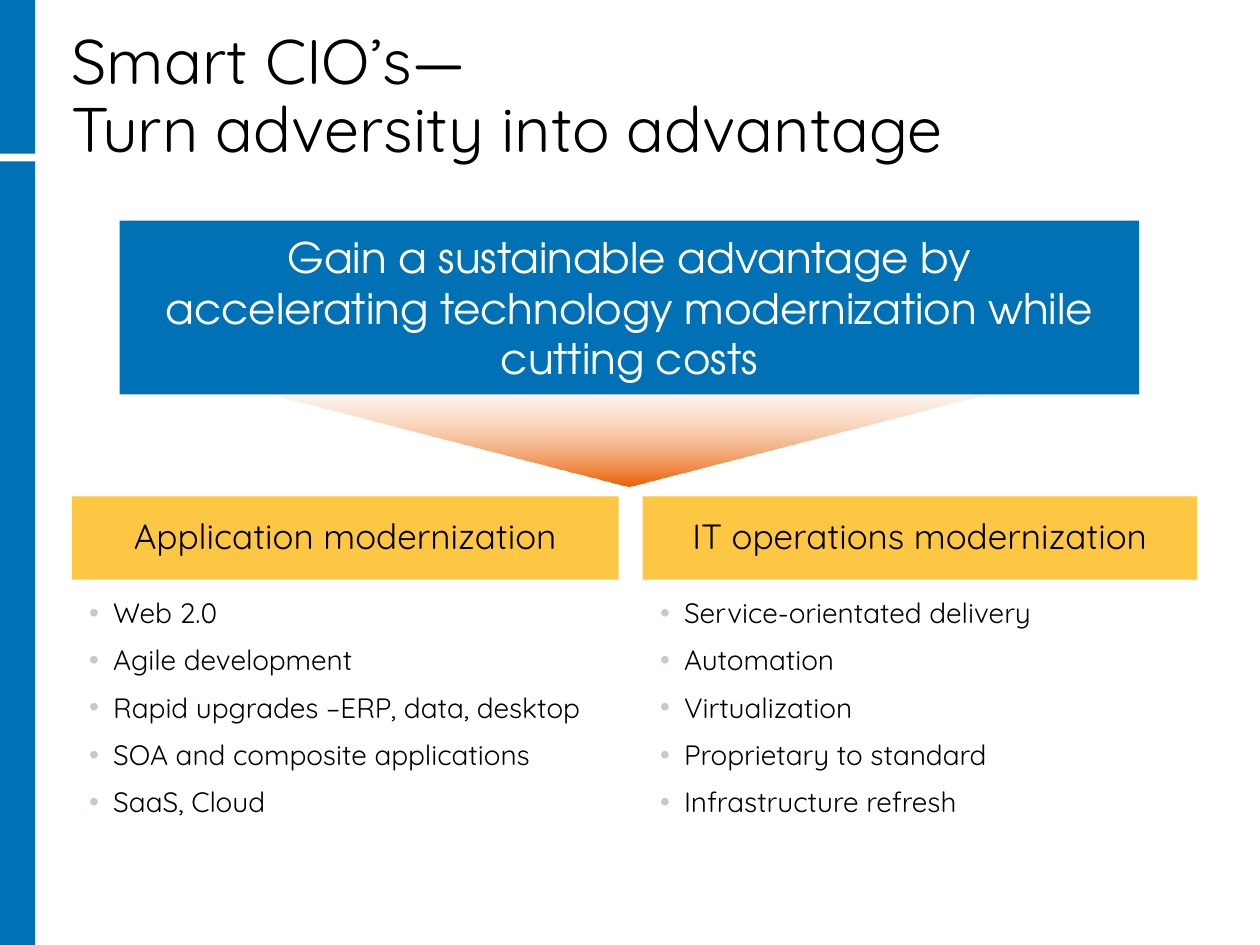
"""Build the slide on adversity and advantage, on a grid of 100 columns by 75 rows."""
import pptx
import pptx.dml.color
import pptx.enum.shapes
import pptx.enum.text
import pptx.oxml
import pptx.oxml.ns
import pptx.util

HUES = {"blue": "0071B4", "gold": "FDC643", "fire": "EB5F01",
        "white": "FFFFFF", "black": "000000", "dot": "CBC9BD"}
SANS, WIDE = "Quicksand", "TeX Gyre Adventor"
KIND = pptx.enum.shapes.MSO_SHAPE
SIDE = pptx.enum.text.PP_ALIGN
ROOM = pptx.enum.text.MSO_ANCHOR
NS = pptx.oxml.ns.nsdecls("a")

deck = pptx.Presentation()
deck.slide_width = pptx.util.Inches(10)
deck.slide_height = pptx.util.Inches(7.5)
col = deck.slide_width / 100
row = deck.slide_height / 75
slide = deck.slides.add_slide(deck.slide_layouts[6])


def block(spot, hue, kind=KIND.RECTANGLE):
    left, top, wide, high = spot
    shape = slide.shapes.add_shape(
        kind, round(left * col), round(top * row), round(wide * col), round(high * row))
    shape.shadow.inherit = False
    shape.line.fill.background()
    if hue:
        shape.fill.solid()
        shape.fill.fore_color.rgb = pptx.dml.color.RGBColor.from_string(HUES[hue])
    else:
        shape.fill.background()
    return shape


def write(shape, lines, size, hue="black", face=SANS, side=SIDE.CENTER,
          room=ROOM.MIDDLE, pitch=0.9, dots=False):
    frame = shape.text_frame
    frame.word_wrap = True
    frame.vertical_anchor = room
    for step, line in enumerate(lines):
        para = frame.add_paragraph() if step else frame.paragraphs[0]
        para.text = line
        para.alignment = side
        para.line_spacing = pitch
        if dots:
            props = para._p.get_or_add_pPr()
            props.set("marL", str(round(1.9 * col)))
            props.set("indent", str(round(-1.9 * col)))
            para.space_before = pptx.util.Pt(4 if step else 0)
            para.space_after = pptx.util.Pt(5.7)
            for part in (f'<a:buClr {NS}><a:srgbClr val="{HUES["dot"]}"/></a:buClr>',
                         f'<a:buFont {NS} typeface="Arial"/>',
                         f'<a:buChar {NS} char="•"/>'):
                props.append(pptx.oxml.parse_xml(part))
        para.font.size = pptx.util.Pt(size)
        para.font.name = face
        para.font.color.rgb = pptx.dml.color.RGBColor.from_string(HUES[hue])
    return frame


for top, high in ((12.8, 62.2), (0, 12.2)):
    block((0, top, 2.8, high), "blue")

arrow = block((11, 28.6, 77.9, 10), None, KIND.ISOSCELES_TRIANGLE)
arrow._element.spPr.xfrm.set("flipV", "1")
arrow.fill.gradient()
arrow.fill.gradient_angle = 270
for stop, hue, place in zip(arrow.fill.gradient_stops, ("fire", "white"), (0, 1)):
    stop.color.rgb = pptx.dml.color.RGBColor.from_string(HUES[hue])
    stop.position = place
fade = arrow._element.spPr.findall(".//" + pptx.oxml.ns.qn("a:srgbClr"))[-1]
fade.append(pptx.oxml.parse_xml(f'<a:alpha {NS} val="0"/>'))

title = slide.shapes.add_textbox(
    round(4.7 * col), round(1.2 * row), round(90.2 * col), round(12.5 * row))
write(title, ["Smart CIO’s—\vTurn adversity into advantage"], 36,
      side=SIDE.LEFT, room=ROOM.BOTTOM)

goal = write(block((9.5, 17.5, 80.9, 13.8), "blue"),
             ["Gain a sustainable advantage by accelerating technology "
              "modernization while cutting costs"],
             24, "white", WIDE, pitch=1)
goal.margin_left = goal.margin_right = round(2.5 * col)

themes = (
    (5.7, 43.4, 6.1, 43.3, "Application modernization",
     ["Web 2.0", "Agile development", "Rapid upgrades –ERP, data, desktop",
      "SOA and composite applications", "SaaS, Cloud"]),
    (51, 44, 51.4, 43.9, "IT operations modernization",
     ["Service-orientated delivery", "Automation", "Virtualization",
      "Proprietary to standard", "Infrastructure refresh"]),
)
for left, wide, edge, span, head, items in themes:
    box = slide.shapes.add_textbox(
        round(edge * col), round(47.1 * row), round(span * col), round(22.8 * row))
    write(box, items, 16, side=SIDE.LEFT, room=ROOM.TOP, dots=True)
    write(block((left, 39.4, wide, 6.6), "gold"), [head], 20)

deck.save("out.pptx")
